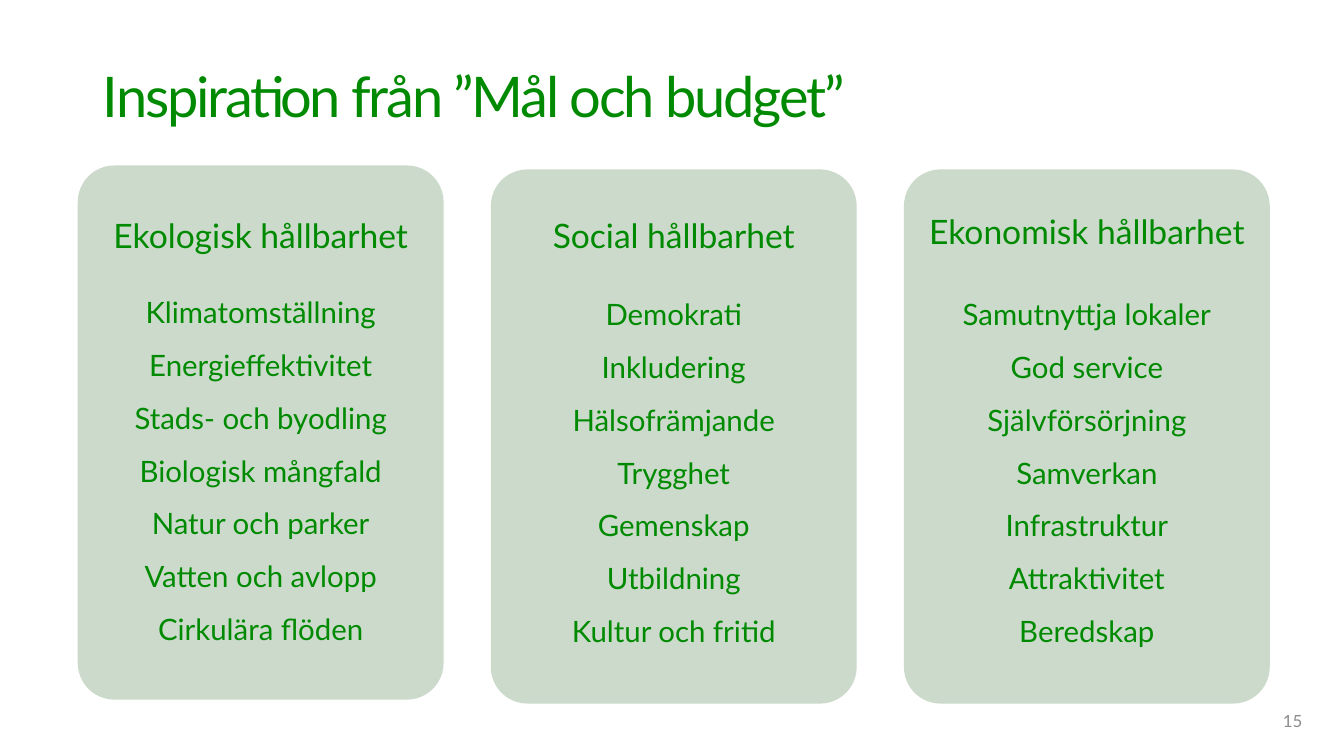
from dataclasses import dataclass

from pptx import Presentation
from pptx.dml.color import RGBColor
from pptx.enum.shapes import MSO_SHAPE
from pptx.enum.text import MSO_ANCHOR, MSO_AUTO_SIZE, PP_ALIGN
from pptx.util import Cm, Pt

ROUNDED = MSO_SHAPE.ROUNDED_RECTANGLE
TOP, MIDDLE, BOTTOM = MSO_ANCHOR.TOP, MSO_ANCHOR.MIDDLE, MSO_ANCHOR.BOTTOM
LEFT, CENTER, RIGHT = PP_ALIGN.LEFT, PP_ALIGN.CENTER, PP_ALIGN.RIGHT
NO_FIT = MSO_AUTO_SIZE.NONE
TITLE_ONLY = 5

FONT = "Lato"
GREEN, PALE_GREEN, GREY = "008A01", "CBDACB", "8C8C8C"

FIRST_CARD_LEFT, CARD_STEP = 1.96, 10.41
CARD_WIDTH, CARD_HEIGHT = 9.22, 13.46
TOPIC_WIDTH, TOPIC_HEIGHT = 8.56, 9.6
HEADING_HEIGHT = 1.5


@dataclass
class Pillar:
    heading: str
    topics: list[str]
    card_top: float
    heading_top: float
    heading_width: float
    topics_top: float


@dataclass
class TextStyle:
    size: float
    color: str = GREEN
    align: PP_ALIGN = CENTER
    anchor: MSO_ANCHOR = TOP
    line_spacing: float = 1.0


TITLE = TextStyle(40, align=LEFT, anchor=BOTTOM, line_spacing=0.9)
HEADING = TextStyle(24, line_spacing=0.9)
TOPICS = TextStyle(21, anchor=MIDDLE, line_spacing=1.5)
PAGE_NUMBER = TextStyle(12, GREY, RIGHT, MIDDLE)

PILLARS = [
    Pillar("Ekologisk hållbarhet",
           ["Klimatomställning", "Energieffektivitet", "Stads- och byodling",
            "Biologisk mångfald", "Natur och parker", "Vatten och avlopp",
            "Cirkulära flöden"],
           4.17, 5.41, 8.64, 6.83),
    Pillar("Social hållbarhet",
           ["Demokrati", "Inkludering", "Hälsofrämjande", "Trygghet",
            "Gemenskap", "Utbildning", "Kultur och fritid"],
           4.27, 5.41, 9.22, 6.88),
    Pillar("Ekonomisk hållbarhet",
           ["Samutnyttja lokaler", "God service", "Självförsörjning",
            "Samverkan", "Infrastruktur", "Attraktivitet", "Beredskap"],
           4.27, 5.31, 9.96, 6.88),
]


def rgb(color: str) -> RGBColor:
    return RGBColor.from_string(color)


def write(frame, lines: list[str], style: TextStyle) -> None:
    frame.word_wrap = True
    frame.auto_size = NO_FIT
    frame.vertical_anchor = style.anchor
    for index, line in enumerate(lines):
        para = frame.add_paragraph() if index else frame.paragraphs[0]
        para.text = line
        para.alignment = style.align
        para.line_spacing = style.line_spacing
        para.font.name = FONT
        para.font.size = Pt(style.size)
        para.font.color.rgb = rgb(style.color)


def add_text(page, left: float, top: float, width: float, height: float,
             lines: list[str], style: TextStyle) -> None:
    box = page.shapes.add_textbox(Cm(left), Cm(top), Cm(width), Cm(height))
    write(box.text_frame, lines, style)


def add_title(page, text: str) -> None:
    title = page.shapes.title
    title.left, title.top = Cm(2.34), Cm(-0.08)
    title.width, title.height = Cm(26.04), Cm(3.48)
    write(title.text_frame, [text], TITLE)
    span = title.text_frame.paragraphs[0].runs[0]
    span._r.get_or_add_rPr().set("spc", "-150")


def add_pillar(page, pillar: Pillar, card_left: float) -> None:
    card = page.shapes.add_shape(ROUNDED, Cm(card_left), Cm(pillar.card_top),
                                 Cm(CARD_WIDTH), Cm(CARD_HEIGHT))
    card.adjustments[0] = 0.1
    card.shadow.inherit = False
    card.fill.solid()
    card.fill.fore_color.rgb = rgb(PALE_GREEN)
    card.line.fill.background()

    center = card_left + CARD_WIDTH / 2
    add_text(page, center - pillar.heading_width / 2, pillar.heading_top,
             pillar.heading_width, HEADING_HEIGHT, [pillar.heading], HEADING)
    add_text(page, center - TOPIC_WIDTH / 2, pillar.topics_top,
             TOPIC_WIDTH, TOPIC_HEIGHT, pillar.topics, TOPICS)


def main() -> None:
    deck = Presentation()
    deck.slide_width, deck.slide_height = Cm(33.87), Cm(19.05)
    page = deck.slides.add_slide(deck.slide_layouts[TITLE_ONLY])
    add_title(page, "Inspiration från ”Mål och budget”")
    for index, pillar in enumerate(PILLARS):
        add_pillar(page, pillar, FIRST_CARD_LEFT + index * CARD_STEP)
    add_text(page, 25.45, 17.65, 7.62, 1.02, ["15"], PAGE_NUMBER)
    deck.save("out.pptx")


if __name__ == "__main__":
    main()
